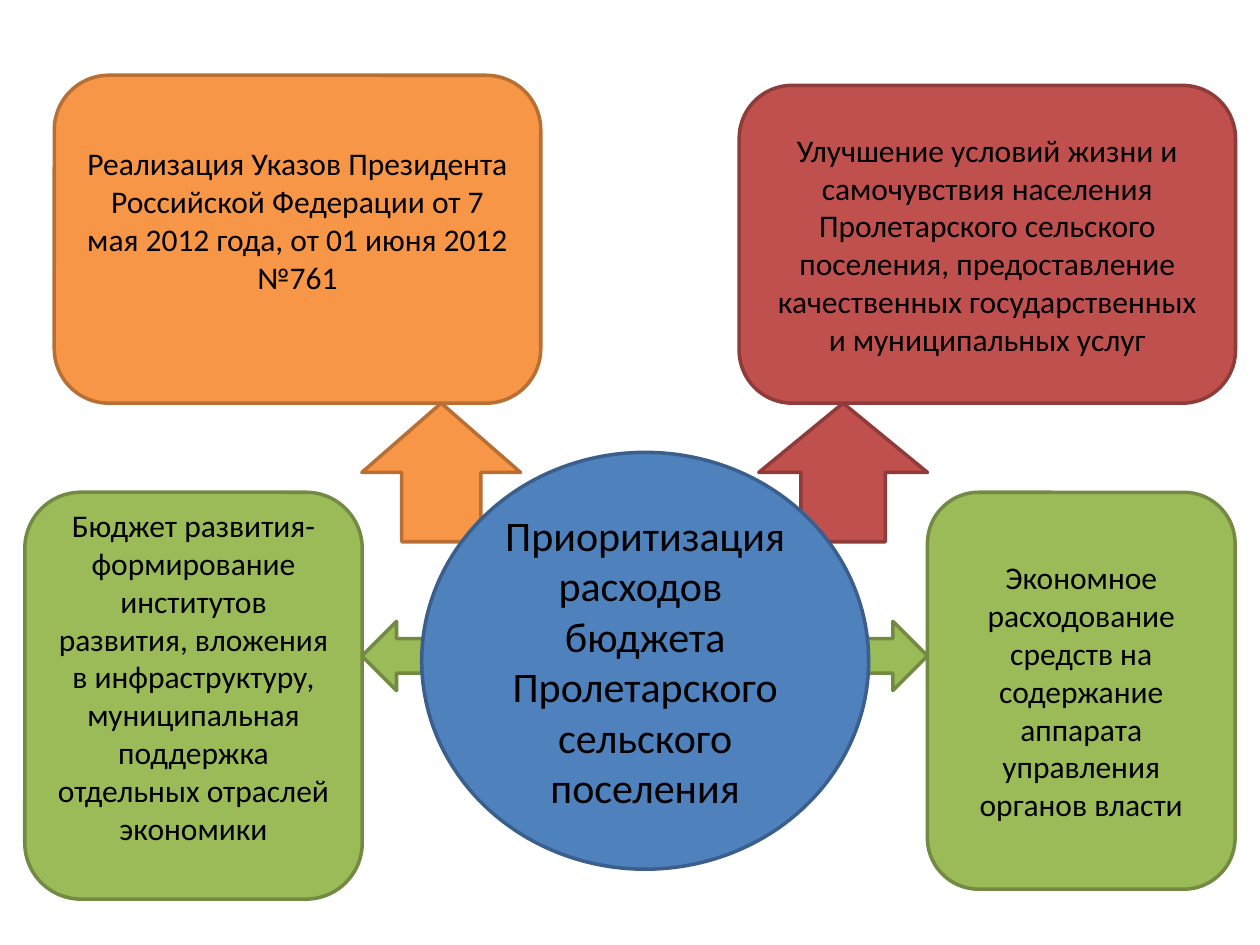
from pptx import Presentation
from pptx.dml.color import RGBColor
from pptx.enum import shapes, text
from pptx.util import Pt

BLACK = RGBColor(0x00, 0x00, 0x00)
ORANGE = (RGBColor(0xF7, 0x96, 0x46), RGBColor(0xB7, 0x6F, 0x34))
GREEN = (RGBColor(0x9B, 0xBB, 0x59), RGBColor(0x73, 0x8A, 0x42))
RED = (RGBColor(0xC0, 0x50, 0x4D), RGBColor(0x8E, 0x3B, 0x39))
BLUE = (RGBColor(0x4F, 0x81, 0xBD), RGBColor(0x3A, 0x5F, 0x8C))

KIND = shapes.MSO_SHAPE
LINE_OF_TEXT = 22  # height of one 18 pt line

# Each priority: wording, colours, card box, space kept below the text,
# arrow preset and arrow box (left, top, width, height in points)
PRIORITIES = [
    ("Реализация Указов Президента Российской Федерации от 7 мая 2012 года, "
     "от 01 июня 2012 №761",
     ORANGE, (31, 43, 278, 187.4), LINE_OF_TEXT,
     KIND.UP_ARROW, (206.8, 230.4, 90.7, 79.2)),
    ("Бюджет развития-формирование институтов развития, вложения в "
     "инфраструктуру, муниципальная поддержка отдельных отраслей экономики",
     GREEN, (14.2, 281.3, 192.8, 232.5), LINE_OF_TEXT,
     KIND.LEFT_ARROW, (206.8, 355, 39.6, 39.6)),
    ("Экономное расходование средств на содержание аппарата управления "
     "органов власти",
     GREEN, (530, 281.3, 175.8, 226.8), 0,
     KIND.RIGHT_ARROW, (490.4, 355, 39.6, 39.6)),
    ("Улучшение условий жизни и самочувствия населения Пролетарского "
     "сельского поселения, предоставление качественных государственных и "
     "муниципальных услуг",
     RED, (422.4, 48.8, 283.6, 181.6), 0,
     KIND.UP_ARROW, (433.6, 230.4, 96.4, 79.2)),
]
GOAL = ["Приоритизация", "расходов ", "бюджета",
        "Пролетарского сельского поселения"]
GOAL_BOX = (241, 258.5, 255.4, 238.2)


def add_figure(slide, preset, box, colours):
    figure = slide.shapes.add_shape(preset, *map(Pt, box))
    fill, outline = colours
    figure.shadow.inherit = False
    figure.fill.solid()
    figure.fill.fore_color.rgb = fill
    figure.line.color.rgb = outline
    figure.line.width = Pt(2)
    return figure


def write(figure, paragraphs, size=18, color=BLACK, space_below=0):
    frame = figure.text_frame
    frame.word_wrap = True
    frame.vertical_anchor = text.MSO_ANCHOR.MIDDLE
    frame.margin_bottom = Pt(3.6 + space_below)
    for index, wording in enumerate(paragraphs):
        paragraph = frame.add_paragraph() if index else frame.paragraphs[0]
        paragraph.alignment = text.PP_ALIGN.CENTER
        run = paragraph.add_run()
        run.text = wording
        run.font.name = "Calibri"
        run.font.size = Pt(size)
        run.font.color.rgb = color


def add_card(slide, box, wording, colours, space_below):
    card = add_figure(slide, KIND.ROUNDED_RECTANGLE, box, colours)
    write(card, [wording], space_below=space_below)


def add_goal(slide, box):
    goal = add_figure(slide, KIND.OVAL, box, BLUE)
    write(goal, GOAL, size=24)


def main():
    deck = Presentation()
    deck.slide_width, deck.slide_height = Pt(720), Pt(540)
    slide = deck.slides.add_slide(deck.slide_layouts[6])
    for wording, colours, card_box, space_below, _, _ in PRIORITIES:
        add_card(slide, card_box, wording, colours, space_below)
    for _, colours, _, _, arrow, arrow_box in PRIORITIES:
        add_figure(slide, arrow, arrow_box, colours)
    add_goal(slide, GOAL_BOX)
    deck.save("out.pptx")


if __name__ == "__main__":
    main()
